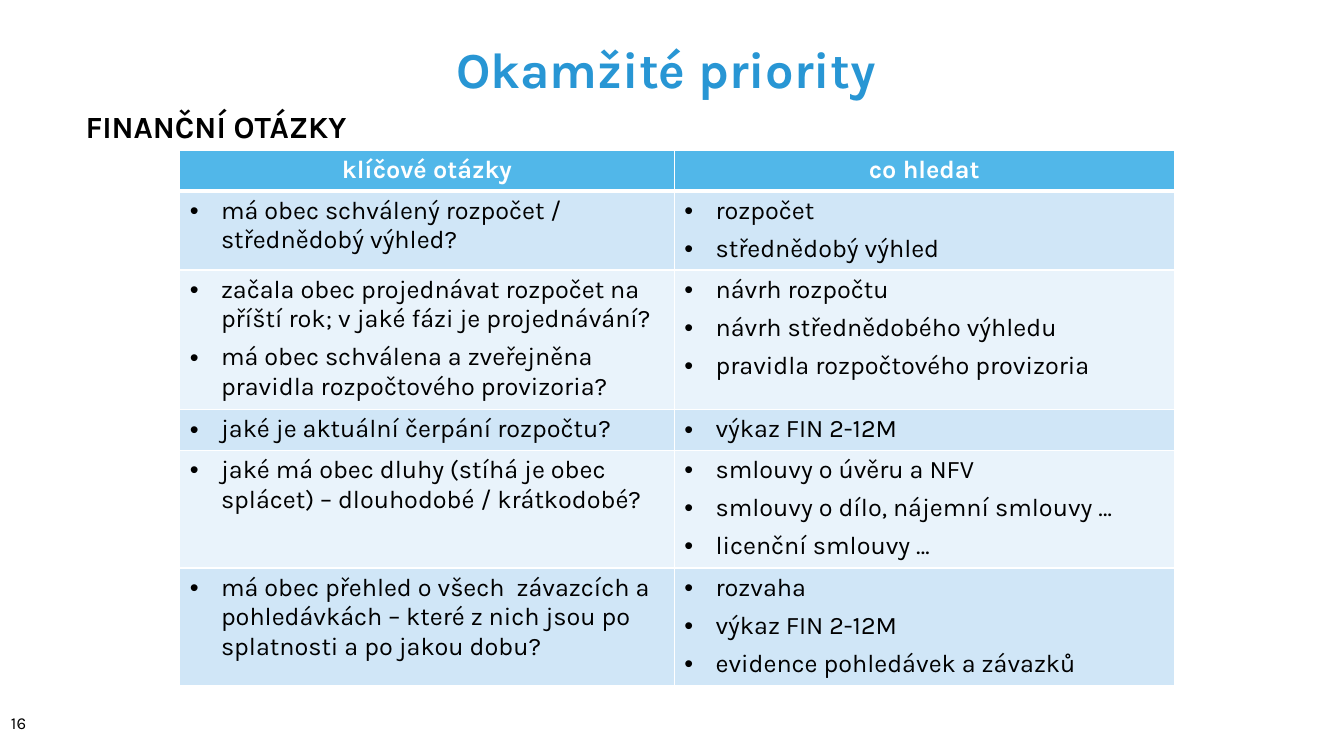
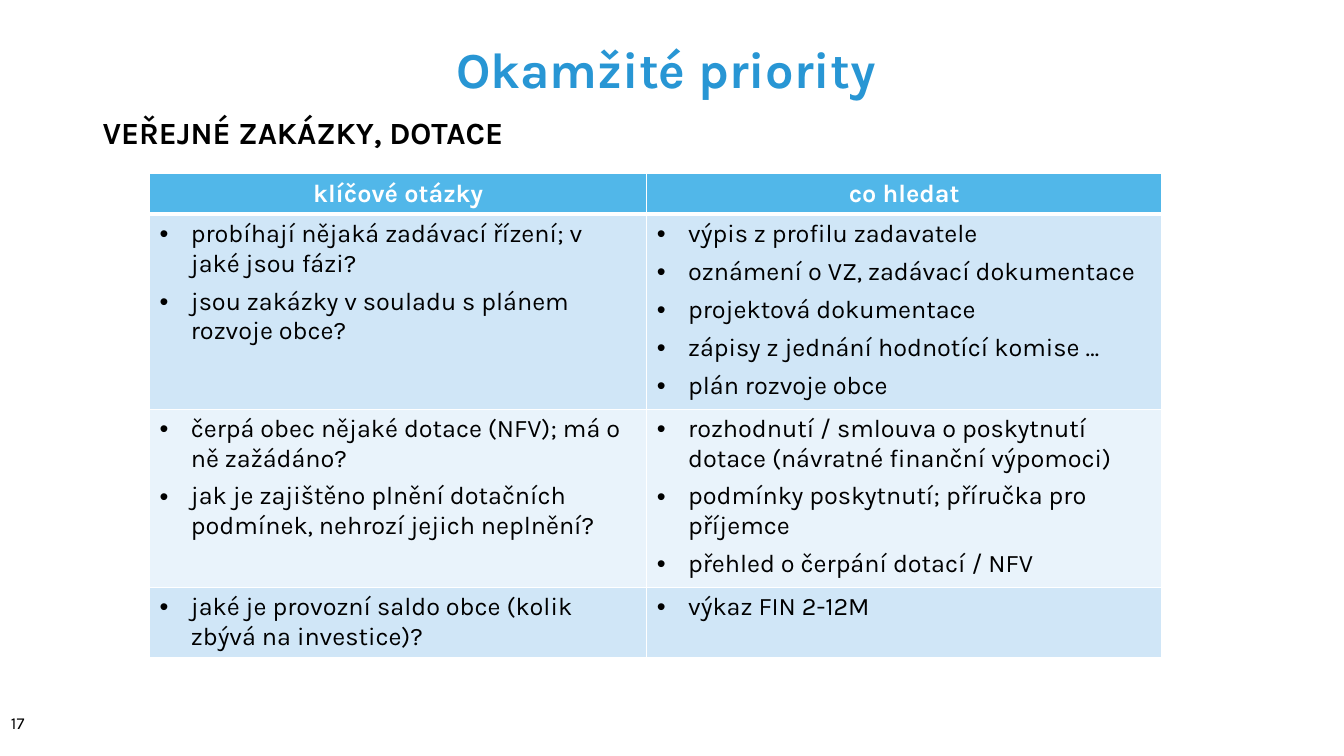
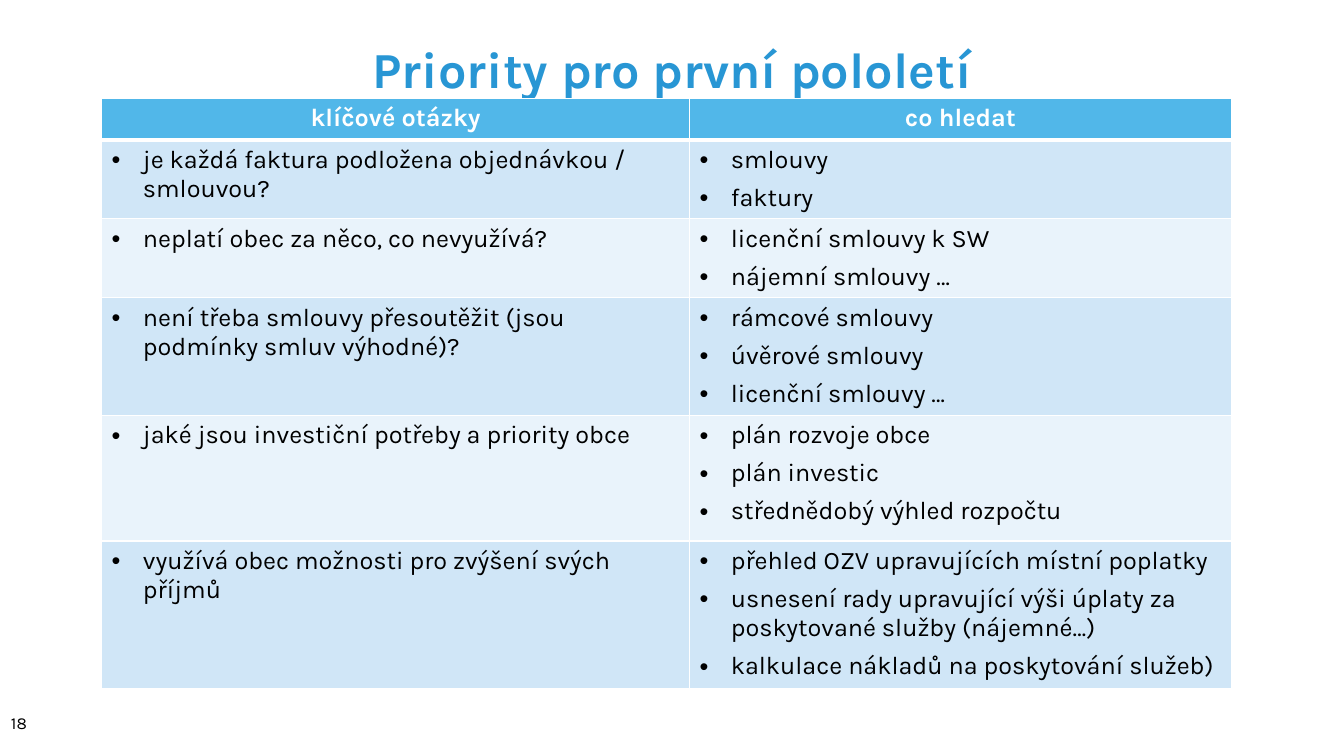
import pptx
import pptx.dml.color
import pptx.enum.text
import pptx.oxml
import pptx.oxml.ns
import pptx.util
from dataclasses import dataclass

ALIGN = pptx.enum.text.PP_ALIGN
ANCHOR = pptx.enum.text.MSO_ANCHOR
NS = pptx.oxml.ns.nsdecls("a")
WIDE = pptx.util.Inches(13.33)
HIGH = pptx.util.Inches(7.5)


@dataclass(frozen=True)
class Theme:
    font: str = "Karla"
    title: str = "2896D4"
    head: str = "51B7E9"
    bands: tuple = ("D0E6F7", "E9F3FB")
    white: str = "FFFFFF"
    ink: str = "000000"
    big: int = 36
    mid: int = 22
    text: int = 18
    small: int = 12
    gap: int = 3
    indent: float = 0.31


THEME = Theme()
HEADS = ("klíčové otázky", "co hledat")

# Boxes, columns and rows are percentages of the slide's width and height.
TITLE = (6.9, 0.13, 86.25, 16.67)
NUMBER = (0.08, 92.8, 3.6, 5.73)

SLIDES = [
    dict(
        title="Okamžité priority ", number=16,
        topic="FINANČNÍ OTÁZKY", place=(5.63, 13.6, 24, 6.27),
        corner=(13.37, 19.87), cols=(36.8, 37.2),
        rows=(5.4, 10.3, 18.15, 5.4, 15.35, 15.2),
        pairs=[
            (["má obec schválený rozpočet / střednědobý výhled?"],
             ["rozpočet", "střednědobý výhled"]),
            (["začala obec projednávat rozpočet na příští rok; v jaké fázi je projednávání?",
              "má obec schválena a zveřejněna pravidla rozpočtového provizoria?"],
             ["návrh rozpočtu", "návrh střednědobého výhledu",
              "pravidla rozpočtového provizoria"]),
            (["jaké je aktuální čerpání rozpočtu?"],
             ["výkaz FIN 2-12M"]),
            (["jaké má obec dluhy (stíhá je obec splácet) – dlouhodobé / krátkodobé?"],
             ["smlouvy o úvěru a NFV", "smlouvy o dílo, nájemní smlouvy …",
              "licenční smlouvy …"]),
            (["má obec přehled o všech  závazcích a pohledávkách – které z nich jsou po "
              "splatnosti a po jakou dobu?"],
             ["rozvaha", "výkaz FIN 2-12M", "evidence pohledávek a závazků"]),
        ]),
    dict(
        title="Okamžité priority ", number=17,
        topic="VEŘEJNÉ ZAKÁZKY, DOTACE", place=(6.9, 14.4, 34, 6.27),
        corner=(11.13, 23), cols=(37, 38.3),
        rows=(5.2, 25.3, 23.1, 9.2),
        pairs=[
            (["probíhají nějaká zadávací řízení; v jaké jsou fázi?",
              "jsou zakázky v souladu s plánem rozvoje obce?"],
             ["výpis z profilu zadavatele", "oznámení o VZ, zadávací dokumentace",
              "projektová dokumentace", "zápisy z jednání hodnotící komise …",
              "plán rozvoje obce"]),
            (["čerpá obec nějaké dotace (NFV); má o ně zažádáno?",
              "jak je zajištěno plnění dotačních podmínek, nehrozí jejich neplnění?"],
             ["rozhodnutí / smlouva o poskytnutí dotace (návratné finanční výpomoci)",
              "podmínky poskytnutí; příručka pro příjemce",
              "přehled o čerpání dotací / NFV"]),
            (["jaké je provozní saldo obce (kolik zbývá na investice)?"],
             ["výkaz FIN 2-12M"]),
        ]),
    dict(
        title="Priority pro první pololetí", number=18,
        topic=None, place=None,
        corner=(7.56, 13), cols=(43.75, 40.3),
        rows=(5.5, 10.3, 10.3, 15.4, 16.6, 19.4),
        pairs=[
            (["je každá faktura podložena objednávkou / smlouvou?"],
             ["smlouvy", "faktury"]),
            (["neplatí obec za něco, co nevyužívá?"],
             ["licenční smlouvy k SW", "nájemní smlouvy …"]),
            (["není třeba smlouvy přesoutěžit (jsou podmínky smluv výhodné)?"],
             ["rámcové smlouvy", "úvěrové smlouvy", "licenční smlouvy …"]),
            (["jaké jsou investiční potřeby a priority obce"],
             ["plán rozvoje obce", "plán investic", "střednědobý výhled rozpočtu"]),
            (["využívá obec možnosti pro zvýšení svých příjmů"],
             ["přehled OZV upravujících místní poplatky",
              "usnesení rady upravující výši úplaty za poskytované služby (nájemné…)",
              "kalkulace nákladů na poskytování služeb)"]),
        ]),
]


def across(share):
    return round(WIDE * share / 100)


def down(share):
    return round(HIGH * share / 100)


def frame(box):
    """Turn a box in percentages into left, top, width and height."""
    left, top, width, height = box
    return across(left), down(top), across(width), down(height)


def ink(para, size, color, bold=False):
    for run in para.runs:
        font = run.font
        font.name = THEME.font
        font.size = pptx.util.Pt(size)
        font.bold = bold
        font.color.rgb = pptx.dml.color.RGBColor.from_string(color)


def label(slide, box, text, size, bold=False, anchor=ANCHOR.TOP):
    area = slide.shapes.add_textbox(*frame(box)).text_frame
    area.word_wrap = True
    area.vertical_anchor = anchor
    area.text = text
    ink(area.paragraphs[0], size, THEME.ink, bold)


def bullet(para):
    props = para._p.get_or_add_pPr()
    step = pptx.util.Inches(THEME.indent)
    props.set("marL", str(step))
    props.set("indent", str(-step))
    for tag in (f'<a:buFont {NS} typeface="Arial"/>', f'<a:buChar {NS} char="•"/>'):
        props.append(pptx.oxml.parse_xml(tag))


def border(cell, top, bottom):
    """Draw white lines round a cell, widths in points."""
    props = cell._tc.get_or_add_tcPr()
    for side, width in zip("LRTB", (1, 1, top, bottom)):
        props.append(pptx.oxml.parse_xml(
            f'<a:ln{side} {NS} w="{pptx.util.Pt(width)}"><a:solidFill>'
            f'<a:srgbClr val="{THEME.white}"/></a:solidFill></a:ln{side}>'))


def paint(cell, color):
    cell.fill.solid()
    cell.fill.fore_color.rgb = pptx.dml.color.RGBColor.from_string(color)


def write(cell, lines, head):
    area = cell.text_frame
    area.text = "\n".join(lines)
    for num, para in enumerate(area.paragraphs):
        if num:
            para.space_before = pptx.util.Pt(THEME.gap)
        para.space_after = pptx.util.Pt(THEME.gap)
        if head:
            para.alignment = ALIGN.CENTER
        else:
            bullet(para)
        ink(para, THEME.text, THEME.white if head else THEME.ink, head)


def grid(slide, corner, cols, rows, pairs):
    box = frame((*corner, sum(cols), sum(rows)))
    table = slide.shapes.add_table(len(rows), len(cols), *box).table
    for col, share in zip(table.columns, cols):
        col.width = across(share)
    for row, share in zip(table.rows, rows):
        row.height = down(share)
    content = [[[head] for head in HEADS], *pairs]
    for r, pair in enumerate(content):
        for c, lines in enumerate(pair):
            cell = table.cell(r, c)
            border(cell, 3 if r == 1 else 1, 3 if r == 0 else 1)
            paint(cell, THEME.bands[(r - 1) % 2] if r else THEME.head)
            write(cell, lines, r == 0)


def heading(slide, text):
    shape = slide.shapes.title
    shape.left, shape.top, shape.width, shape.height = frame(TITLE)
    area = shape.text_frame
    area.text = text
    area.vertical_anchor = ANCHOR.MIDDLE
    para = area.paragraphs[0]
    para.alignment = ALIGN.CENTER
    para.line_spacing = 1.13
    ink(para, THEME.big, THEME.title, True)


def page(deck, title, number, topic, place, corner, cols, rows, pairs):
    slide = deck.slides.add_slide(deck.slide_layouts.get_by_name("Title Only"))
    heading(slide, title)
    label(slide, NUMBER, str(number), THEME.small, anchor=ANCHOR.MIDDLE)
    grid(slide, corner, cols, rows, pairs)
    if topic:
        label(slide, place, topic, THEME.mid, bold=True)


def main():
    deck = pptx.Presentation()
    deck.slide_width, deck.slide_height = WIDE, HIGH
    for data in SLIDES:
        page(deck, **data)
    deck.save("out.pptx")


if __name__ == "__main__":
    main()
